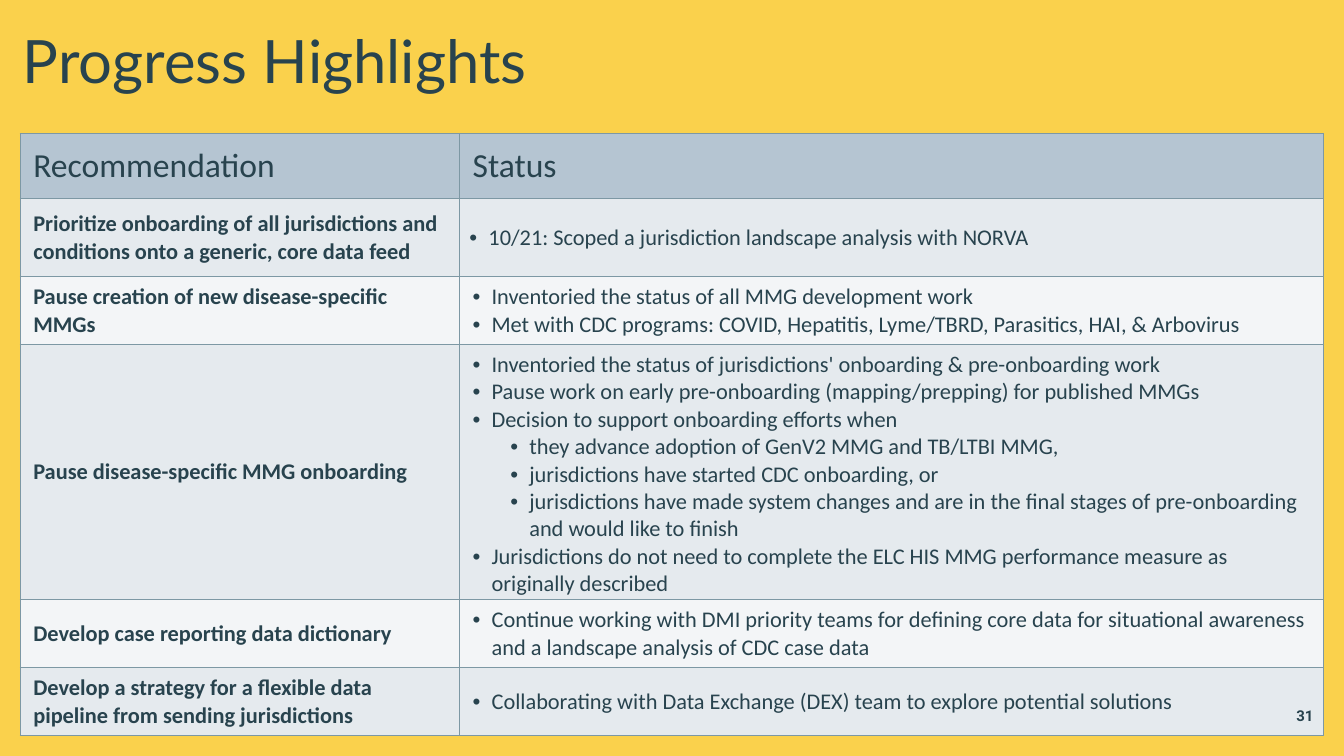
from dataclasses import dataclass

from lxml.etree import SubElement
from pptx import Presentation
from pptx.dml.color import RGBColor
from pptx.enum.text import MSO_ANCHOR, PP_ALIGN
from pptx.oxml.ns import qn
from pptx.util import Cm, Pt

INK = "28434E"
BACKGROUND = "FAD14C"
BORDER = "7D98A4"
HEADER_FILL = "B5C5D2"
BAND_FILLS = ("E5EAEE", "F3F5F7")
COLUMN_WIDTHS = (11.07, 21.77)
WIDE_MARGINS = (0.33, 0.17)
TIGHT_MARGINS = (0.25, 0)
HANGING = 0.48
LEVEL_STEP = 0.95


@dataclass(frozen=True)
class Bullet:
    text: str
    level: int = 0


@dataclass(frozen=True)
class Recommendation:
    title: str
    height: float
    status: tuple[Bullet, ...]
    status_margins: tuple[float, float] = WIDE_MARGINS


HEADER_HEIGHT = 1.64
RECOMMENDATIONS = (
    Recommendation(
        "Prioritize onboarding of all jurisdictions and conditions onto a generic, core data feed",
        1.96,
        (Bullet("10/21: Scoped a jurisdiction landscape analysis with NORVA"),),
        TIGHT_MARGINS,
    ),
    Recommendation(
        "Pause creation of new disease-specific MMGs",
        1.71,
        (
            Bullet("Inventoried the status of all MMG development work"),
            Bullet("Met with CDC programs: COVID, Hepatitis, Lyme/TBRD, Parasitics, HAI, & Arbovirus"),
        ),
    ),
    Recommendation(
        "Pause disease-specific MMG onboarding",
        6.43,
        (
            Bullet("Inventoried the status of jurisdictions' onboarding & pre-onboarding work"),
            Bullet("Pause work on early pre-onboarding (mapping/prepping) for published MMGs"),
            Bullet("Decision to support onboarding efforts when"),
            Bullet("they advance adoption of GenV2 MMG and TB/LTBI MMG,", 1),
            Bullet("jurisdictions have started CDC onboarding, or", 1),
            Bullet("jurisdictions have made system changes and are in the final stages of "
                   "pre-onboarding and would like to finish", 1),
            Bullet("Jurisdictions do not need to complete the ELC HIS MMG performance measure "
                   "as originally described"),
        ),
    ),
    Recommendation(
        "Develop case reporting data dictionary",
        1.71,
        (Bullet("Continue working with DMI priority teams for defining core data for "
                "situational awareness and a landscape analysis of CDC case data"),),
    ),
    Recommendation(
        "Develop a strategy for a flexible data pipeline from sending jurisdictions",
        1.71,
        (Bullet("Collaborating with Data Exchange (DEX) team to explore potential solutions"),),
    ),
)


def color(value: str) -> RGBColor:
    return RGBColor.from_string(value)


def add_run(paragraph, text: str, size: float, name: str = "Calibri", bold: bool = False) -> None:
    run = paragraph.add_run()
    run.text = text
    for attribute, value in {"size": Pt(size), "name": name, "bold": bold}.items():
        setattr(run.font, attribute, value)
    run.font.color.rgb = color(INK)


def add_text(slide, box: tuple[float, ...], text: str, size: float, name: str,
             bold: bool = False, alignment=PP_ALIGN.LEFT) -> None:
    frame = slide.shapes.add_textbox(*map(Cm, box)).text_frame
    frame.word_wrap = True
    frame.vertical_anchor = MSO_ANCHOR.MIDDLE
    frame.paragraphs[0].alignment = alignment
    add_run(frame.paragraphs[0], text, size, name, bold)


def format_cell(cell, fill: str, margins: tuple[float, float] = WIDE_MARGINS) -> None:
    side, edge = map(Cm, margins)
    formats = {
        "margin_left": side, "margin_right": side,
        "margin_top": edge, "margin_bottom": edge,
        "vertical_anchor": MSO_ANCHOR.MIDDLE,
    }
    for attribute, value in formats.items():
        setattr(cell, attribute, value)
    properties = cell._tc.get_or_add_tcPr()
    for tag in ("a:lnL", "a:lnR", "a:lnT", "a:lnB"):
        line = SubElement(properties, qn(tag), w=str(Pt(1)))
        SubElement(SubElement(line, qn("a:solidFill")), qn("a:srgbClr"), val=BORDER)
    cell.fill.solid()
    cell.fill.fore_color.rgb = color(fill)


def add_bullets(cell, bullets: tuple[Bullet, ...]) -> None:
    frame = cell.text_frame
    for index, bullet in enumerate(bullets):
        paragraph = frame.add_paragraph() if index else frame.paragraphs[0]
        paragraph.level = bullet.level
        properties = paragraph._p.get_or_add_pPr()
        properties.set("marL", str(Cm(HANGING + LEVEL_STEP * bullet.level)))
        properties.set("indent", str(-Cm(HANGING)))
        SubElement(properties, qn("a:buFont"), typeface="Arial")
        SubElement(properties, qn("a:buChar"), char="•")
        add_run(paragraph, bullet.text, 16)


def add_progress_table(slide) -> None:
    heights = (HEADER_HEIGHT, *(item.height for item in RECOMMENDATIONS))
    table = slide.shapes.add_table(
        len(heights), len(COLUMN_WIDTHS), Cm(0.51), Cm(3.37),
        Cm(sum(COLUMN_WIDTHS)), Cm(sum(heights)),
    ).table
    table.first_row = table.horz_banding = False
    for column, width in zip(table.columns, COLUMN_WIDTHS):
        column.width = Cm(width)
    for row, height in zip(table.rows, heights):
        row.height = Cm(height)

    for index, heading in enumerate(("Recommendation", "Status")):
        cell = table.cell(0, index)
        format_cell(cell, HEADER_FILL)
        add_run(cell.text_frame.paragraphs[0], heading, 24)
    for index, item in enumerate(RECOMMENDATIONS):
        fill = BAND_FILLS[index % len(BAND_FILLS)]
        title_cell, status_cell = table.rows[index + 1].cells
        format_cell(title_cell, fill)
        add_run(title_cell.text_frame.paragraphs[0], item.title, 16, bold=True)
        format_cell(status_cell, fill, item.status_margins)
        add_bullets(status_cell, item.status)


def main() -> None:
    presentation = Presentation()
    presentation.slide_width, presentation.slide_height = Cm(33.87), Cm(19.05)
    slide = presentation.slides.add_slide(presentation.slide_layouts[6])
    slide.background.fill.solid()
    slide.background.fill.fore_color.rgb = color(BACKGROUND)
    add_text(slide, (0.33, 0, 32.18, 3.02), "Progress Highlights", 42.7, "Lato")
    add_progress_table(slide)
    add_text(slide, (31.65, 17.53, 1.7, 1.02), "31", 10.7, "Roboto", True, PP_ALIGN.RIGHT)
    presentation.save("out.pptx")


if __name__ == "__main__":
    main()
